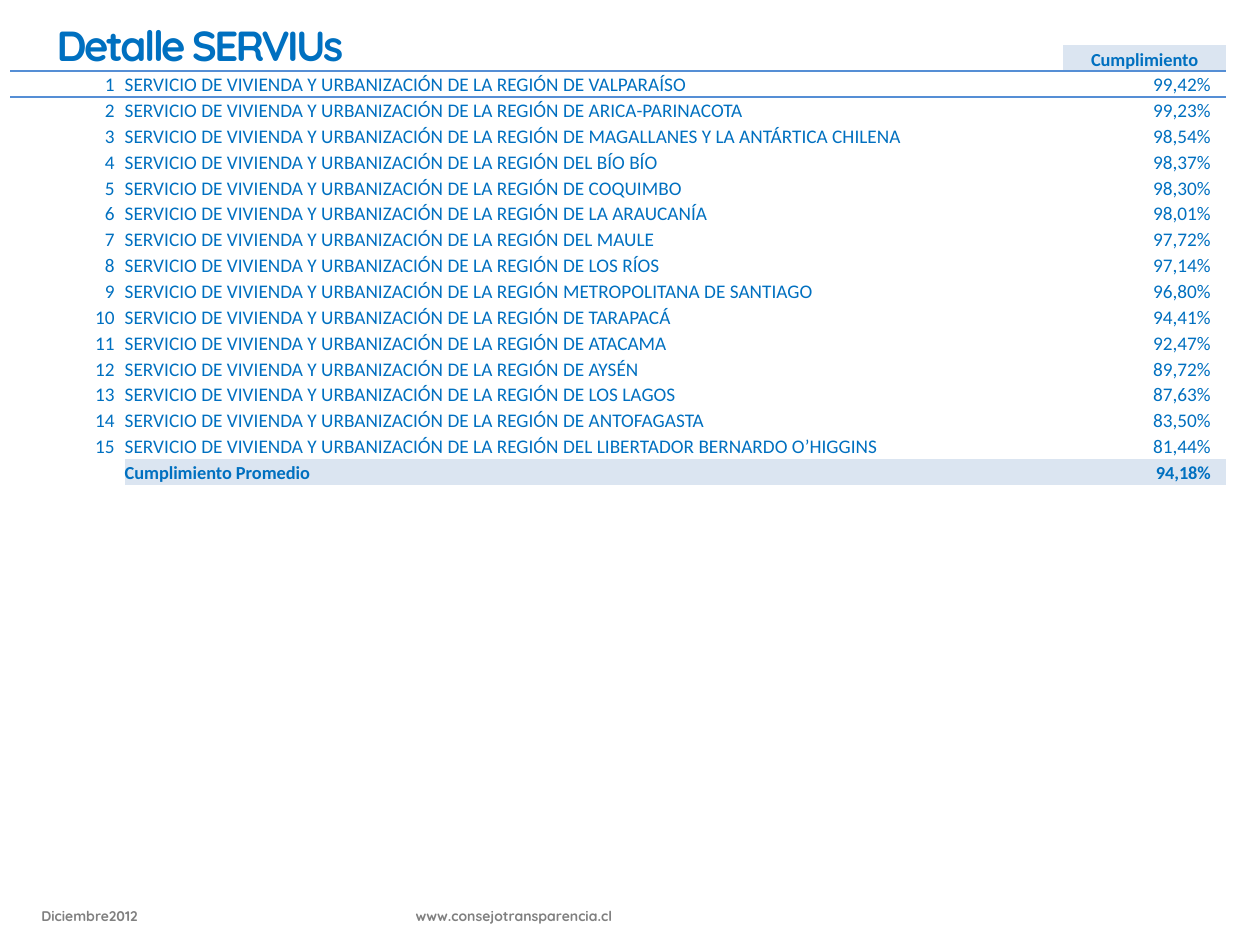
from pptx import Presentation
from pptx.dml.color import RGBColor
from pptx.enum.text import MSO_ANCHOR, PP_ALIGN
from pptx.oxml.ns import qn
from pptx.util import Inches, Pt
from lxml.etree import SubElement

BLUE, GREY, BAND, RULE = "0070C0", "808080", "DBE5F1", "558ED5"
NO_STYLE = "{2D5ABB26-0587-4C30-8999-92F81FD0307C}"
SERVICE = "SERVICIO DE VIVIENDA Y URBANIZACIÓN DE LA REGIÓN "
REGIONS = [
    ("DE VALPARAÍSO", "99,42%"),
    ("DE ARICA-PARINACOTA", "99,23%"),
    ("DE MAGALLANES Y LA ANTÁRTICA CHILENA", "98,54%"),
    ("DEL BÍO BÍO", "98,37%"),
    ("DE COQUIMBO", "98,30%"),
    ("DE LA ARAUCANÍA", "98,01%"),
    ("DEL MAULE", "97,72%"),
    ("DE LOS RÍOS", "97,14%"),
    ("METROPOLITANA DE SANTIAGO", "96,80%"),
    ("DE TARAPACÁ", "94,41%"),
    ("DE ATACAMA", "92,47%"),
    ("DE AYSÉN", "89,72%"),
    ("DE LOS LAGOS", "87,63%"),
    ("DE ANTOFAGASTA", "83,50%"),
    ("DEL LIBERTADOR BERNARDO O’HIGGINS", "81,44%"),
]


def color(value):
    return RGBColor.from_string(value)


def set_font(font, name, size, value, bold):
    font.name, font.size, font.bold = name, Pt(size), bold
    font.color.rgb = color(value)


def add_text(page, left, top, width, height, text, size, value):
    box = page.shapes.add_textbox(*map(Inches, (left, top, width, height)))
    box.text_frame.word_wrap = True
    para = box.text_frame.paragraphs[0]
    para.text = text
    set_font(para.font, "Quicksand", size, value, True)
    return box


def add_title(page, left, top, width, height):
    box = add_text(page, left, top, width, height, "Detalle SERVIUs", 24, BLUE)
    box.text_frame.vertical_anchor = MSO_ANCHOR.MIDDLE
    span = box.text_frame.paragraphs[0].runs[0]
    span.font._element.set("spc", "-150")


def add_footer(page, left, top, width, height):
    """Date at the left, web address at a tab stop."""
    text = "Diciembre2012\twww.consejotransparencia.cl"
    box = add_text(page, left, top, width, height, text, 8, GREY)
    properties = box.text_frame.paragraphs[0]._p.get_or_add_pPr()
    stops = properties.makeelement(qn("a:tabLst"), {})
    properties.insert(0, stops)
    SubElement(stops, qn("a:tab"), pos=str(Inches(2.97)), algn="l")


def add_border(cell, side):
    properties = cell._tc.get_or_add_tcPr()
    line = properties.makeelement(qn(f"a:{side}"), {"w": str(Pt(1))})
    properties.insert(0, line)
    fill = SubElement(line, qn("a:solidFill"))
    SubElement(fill, qn("a:srgbClr"), val=RULE)


def fill_cell(cell, text, align, margins, bold, band):
    cell.vertical_anchor = MSO_ANCHOR.BOTTOM
    cell.margin_left, cell.margin_right = map(Inches, margins)
    cell.margin_top = cell.margin_bottom = 0
    if band:
        cell.fill.solid()
        cell.fill.fore_color.rgb = color(BAND)
    else:
        cell.fill.background()
    para = cell.text_frame.paragraphs[0]
    para.alignment = align
    size = 10.5 if bold else 11
    if text:
        para.text = text
        set_font(para.font, "Calibri", size, BLUE, bold)
    else:
        # An empty cell takes its line height from the end mark.
        SubElement(para._p, qn("a:endParaRPr"), sz=str(int(size * 100)))


def add_compliance_table(page, left, top, width, height):
    rows = [("", "", "Cumplimiento")]
    rows += [(str(number), SERVICE + region, share)
             for number, (region, share) in enumerate(REGIONS, 1)]
    rows += [("", "Cumplimiento Promedio", "94,18%")]
    last = len(rows) - 1
    frame = page.shapes.add_table(len(rows), 3, *map(Inches, (left, top, width, height)))
    table = frame.table
    table.first_row = table.horz_banding = False
    table._tbl.tblPr.find(qn("a:tableStyleId")).text = NO_STYLE
    for column, share in zip(table.columns, (0.91, 7.45, 1.29)):
        column.width = Inches(share)
    aligns = (PP_ALIGN.RIGHT, PP_ALIGN.LEFT, PP_ALIGN.RIGHT)
    margins = ((0.08, 0.08), (0, 0), (0, 0.12))
    for r, texts in enumerate(rows):
        table.rows[r].height = Inches(height / len(rows))
        for c, text in enumerate(texts):
            cell, edge = table.cell(r, c), r in (0, last)
            align, margin = aligns[c], margins[c]
            if r == 0:
                align, margin = PP_ALIGN.CENTER, (0, 0)
            fill_cell(cell, text, align, margin, edge, edge and text != "")
            if r < 2:
                add_border(cell, ("lnB", "lnT")[r])


def main():
    deck = Presentation()
    deck.slide_width, deck.slide_height = Inches(10), Inches(7.5)
    page = deck.slides.add_slide(deck.slide_layouts[6])
    add_compliance_table(page, 0.08, 0.36, 9.65, 3.49)
    add_footer(page, 0.23, 7.15, 9.77, 0.5)
    add_title(page, 0.35, -0.27, 9.51, 1.25)
    deck.save("out.pptx")


if __name__ == "__main__":
    main()
